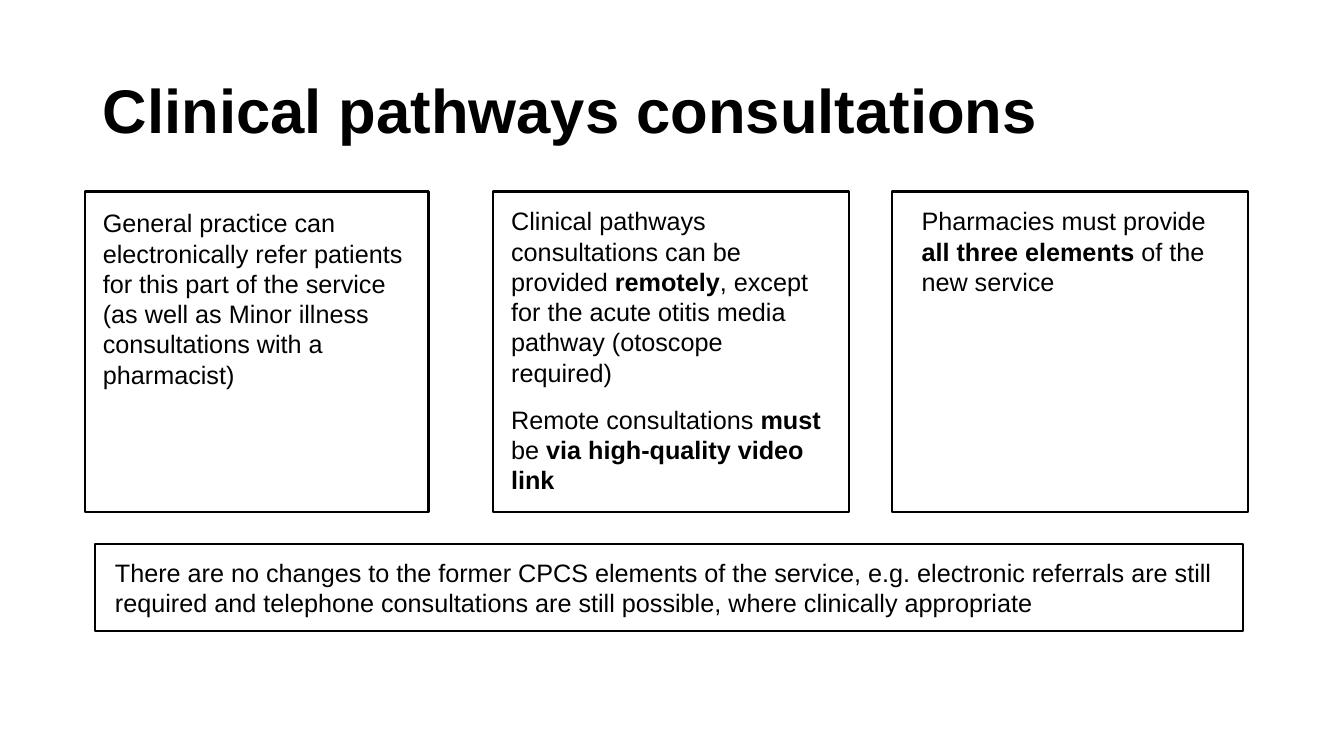
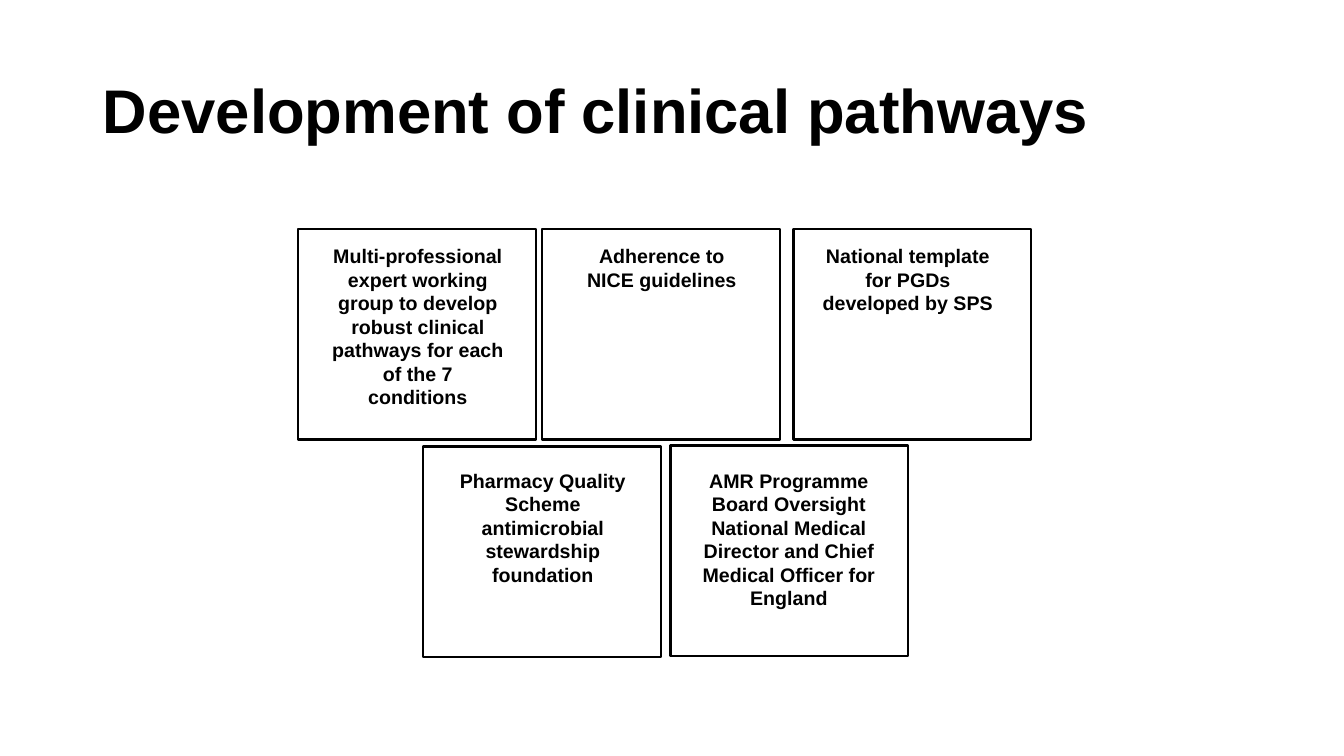
from dataclasses import dataclass

from pptx import Presentation
from pptx.dml.color import RGBColor
from pptx.enum.shapes import MSO_SHAPE
from pptx.enum.text import MSO_ANCHOR, MSO_AUTO_SIZE, PP_ALIGN
from pptx.util import Pt

RECTANGLE = MSO_SHAPE.RECTANGLE
TOP, MIDDLE = MSO_ANCHOR.TOP, MSO_ANCHOR.MIDDLE
LEFT, CENTER = PP_ALIGN.LEFT, PP_ALIGN.CENTER
NO_AUTOFIT = MSO_AUTO_SIZE.NONE

EMU_PER_PX = 9144  # 100 px to the inch
TITLE_ONLY = 5


@dataclass(frozen=True)
class Theme:
    font: str = "Arial"
    ink: RGBColor = RGBColor(0x00, 0x00, 0x00)
    paper: RGBColor = RGBColor(0xFF, 0xFF, 0xFF)
    title_size: int = 44
    body_size: int = 18
    card_size: int = 14
    paragraph_gap: int = 12
    border: float = 1.5


THEME = Theme()

# Each consultation card: left, width, (left, top, right) insets, paragraphs of (text, bold) runs
CONSULTATION_CARDS = [
    (84, 341, (18, 16, 15), [
        [("General practice can electronically refer patients for this part of the service "
          "(as well as Minor illness consultations with a pharmacist)", False)],
    ]),
    (489, 353, (18, 14, 23), [
        [("Clinical pathways consultations can be provided ", False), ("remotely", True),
         (", except for the acute otitis media pathway (otoscope required)", False)],
        [("Remote consultations ", False), ("must", True), (" be ", False),
         ("via high-quality video link", True)],
    ]),
    (885, 353, (29, 14, 15), [
        [("Pharmacies must provide ", False), ("all three elements", True),
         (" of the new service", False)],
    ]),
]
CPCS_NOTE = ("There are no changes to the former CPCS elements of the service, e.g. electronic "
             "referrals are still required and telephone consultations are still possible, "
             "where clinically appropriate")

# Each development card: left, top, (left, top, right) insets, text
DEVELOPMENT_CARDS = [
    (296, 227, (32, 15, 31), "Multi-professional expert working group to develop robust "
                             "clinical pathways for each of the 7 conditions"),
    (538, 227, (32, 15, 31), "Adherence to NICE guidelines"),
    (787, 227, (27, 15, 36), "National template for PGDs developed by SPS"),
    (420, 443, (32, 22, 31), "Pharmacy Quality Scheme antimicrobial stewardship foundation"),
    (665, 442, (31, 23, 32), "AMR Programme Board Oversight National Medical Director and "
                             "Chief Medical Officer for England"),
]


def px(length):
    return length * EMU_PER_PX


def set_attributes(target, values):
    for name, value in values.items():
        setattr(target, name, value)


def format_run(run, size, bold):
    set_attributes(run.font, {"name": THEME.font, "size": Pt(size), "bold": bold})
    run.font.color.rgb = THEME.ink


def add_titled_slide(deck, heading):
    slide = deck.slides.add_slide(deck.slide_layouts[TITLE_ONLY])
    title = slide.shapes.title
    set_attributes(title, {"left": px(92), "top": px(40), "width": px(1150), "height": px(145)})
    set_attributes(title.text_frame, {
        "text": heading, "vertical_anchor": MIDDLE, "word_wrap": True, "auto_size": NO_AUTOFIT})
    paragraph = title.text_frame.paragraphs[0]
    set_attributes(paragraph, {"alignment": LEFT, "line_spacing": 0.9})
    format_run(paragraph.runs[0], THEME.title_size, True)
    return slide


def add_card(slide, bounds, insets, paragraphs, size, alignment=LEFT):
    card = slide.shapes.add_shape(RECTANGLE, *map(px, bounds))
    card.shadow.inherit = False
    card.fill.solid()
    card.fill.fore_color.rgb = THEME.paper
    card.line.color.rgb = THEME.ink
    card.line.width = Pt(THEME.border)

    inset_left, inset_top, inset_right = map(px, insets)
    frame = card.text_frame
    set_attributes(frame, {
        "margin_left": inset_left, "margin_top": inset_top, "margin_right": inset_right,
        "margin_bottom": 0, "vertical_anchor": TOP, "word_wrap": True})
    for index, runs in enumerate(paragraphs):
        paragraph = frame.add_paragraph() if index else frame.paragraphs[0]
        set_attributes(paragraph, {
            "alignment": alignment, "space_before": Pt(THEME.paragraph_gap if index else 0)})
        for text, bold in runs:
            run = paragraph.add_run()
            run.text = text
            format_run(run, size, bold)


def build_consultations(deck):
    slide = add_titled_slide(deck, "Clinical pathways consultations")
    for left, width, insets, paragraphs in CONSULTATION_CARDS:
        add_card(slide, (left, 190, width, 318), insets, paragraphs, THEME.body_size)
    # Full-width note under the cards
    add_card(slide, (94, 540, 1139, 86), (20, 13, 19), [[(CPCS_NOTE, False)]], THEME.body_size)


def build_development(deck):
    slide = add_titled_slide(deck, "Development of clinical pathways")
    for left, top, insets, text in DEVELOPMENT_CARDS:
        add_card(slide, (left, top, 236, 209), insets, [[(text, True)]], THEME.card_size, CENTER)


def main():
    deck = Presentation()
    set_attributes(deck, {"slide_width": px(1333), "slide_height": px(750)})
    build_consultations(deck)
    build_development(deck)
    deck.save("out.pptx")


if __name__ == "__main__":
    main()
